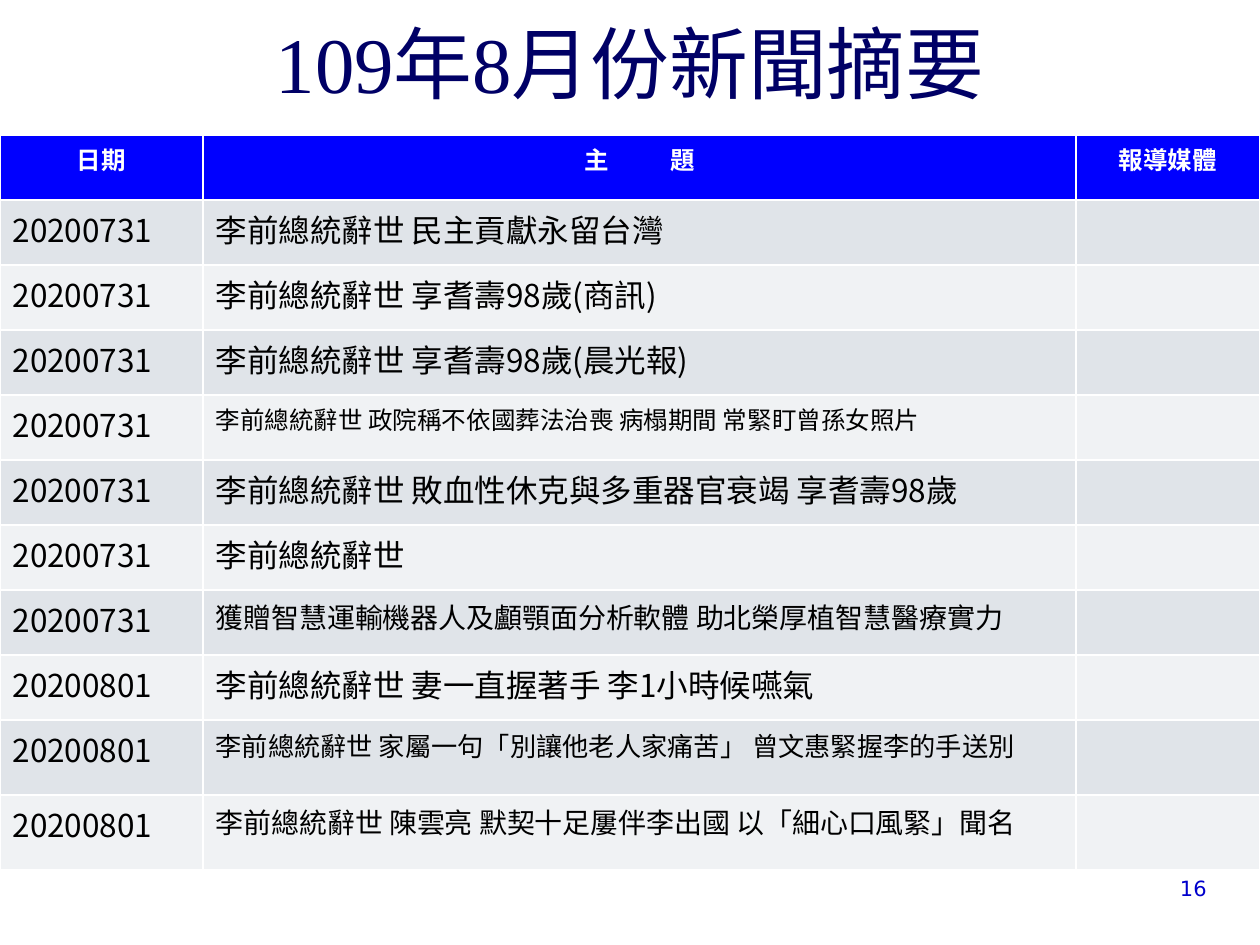
from pptx import Presentation
from pptx.dml.color import RGBColor
from pptx.enum.text import MSO_ANCHOR, PP_ALIGN
from pptx.oxml.ns import qn
from pptx.util import Emu, Pt
from lxml.etree import SubElement

CJK = "Noto Sans CJK SC"
COLUMNS = [203, 873, 184]
ROW_HEIGHTS = [65] * 9 + [75] * 2
HEADER_FILL = "0000FF"
BAND_FILLS = ["E0E4E9", "F0F2F4"]
# Date, subject, size of the subject
NEWS = [
    ("20200731", "李前總統辭世 民主貢獻永留台灣", 18),
    ("20200731", "李前總統辭世 享耆壽98歲(商訊)", 18),
    ("20200731", "李前總統辭世 享耆壽98歲(晨光報)", 18),
    ("20200731", "李前總統辭世 政院稱不依國葬法治喪 病榻期間 常緊盯曾孫女照片", 14),
    ("20200731", "李前總統辭世 敗血性休克與多重器官衰竭 享耆壽98歲", 18),
    ("20200731", "李前總統辭世", 18),
    ("20200731", "獲贈智慧運輸機器人及顱顎面分析軟體 助北榮厚植智慧醫療實力", 16),
    ("20200801", "李前總統辭世 妻一直握著手 李1小時候嚥氣", 18),
    ("20200801", "李前總統辭世 家屬一句「別讓他老人家痛苦」 曾文惠緊握李的手送別", 15),
    ("20200801", "李前總統辭世 陳雲亮 默契十足屢伴李出國 以「細心口風緊」聞名", 16),
]


def px(n):
    return Emu(round(n * 914400 / 126))


def color(value):
    return RGBColor.from_string(value)


def place(shape, left, top, width, height):
    box = dict(left=left, top=top, width=width, height=height)
    for name, value in box.items():
        setattr(shape, name, px(value))


def add_run(p, text, size, hex_color, font=CJK, bold=False):
    r = p.add_run()
    r.text = text
    for name, value in dict(size=Pt(size), name=font, bold=bold).items():
        setattr(r.font, name, value)
    r.font.color.rgb = color(hex_color)
    if font == CJK:
        SubElement(r.font._element, qn("a:ea"), typeface=CJK)
    return r


def add_title(s, text):
    title = s.shapes.title
    place(title, 79, 43, 1102, 73)
    tf = title.text_frame
    tf.vertical_anchor = MSO_ANCHOR.BOTTOM
    p = tf.paragraphs[0]
    p.alignment = PP_ALIGN.CENTER
    add_run(p, text, 45, "000066", "Times New Roman")


def fill_header(cells):
    for cell, parts in zip(cells, [["日期"], ["主 ", "題"], ["報導媒體"]]):
        p = cell.text_frame.paragraphs[0]
        p.alignment = PP_ALIGN.CENTER
        runs = [add_run(p, part, 14, "FFFFFF", bold=True) for part in parts]
        for r in runs[:-1]:
            r.font._element.set("spc", "1600")  # wide gap between the two characters


def add_news_table(s):
    table = s.shapes.add_table(len(ROW_HEIGHTS), len(COLUMNS), px(0), px(135),
                               px(sum(COLUMNS)), px(sum(ROW_HEIGHTS))).table
    for column, width in zip(table.columns, COLUMNS):
        column.width = px(width)
    for i, (row, height) in enumerate(zip(table.rows, ROW_HEIGHTS)):
        row.height = px(height)
        for cell in row.cells:
            cell.fill.solid()
            cell.fill.fore_color.rgb = color(BAND_FILLS[(i - 1) % 2] if i else HEADER_FILL)
    fill_header(table.rows[0].cells)
    for i, (date, subject, size) in enumerate(NEWS, 1):
        add_run(table.cell(i, 0).text_frame.paragraphs[0], date, 18, "000000")
        add_run(table.cell(i, 1).text_frame.paragraphs[0], subject, size, "000000")


def add_page_number(s, number):
    tf = s.shapes.add_textbox(px(1126), px(869), px(93), px(38)).text_frame
    tf.word_wrap = True
    p = tf.paragraphs[0]
    p.alignment = PP_ALIGN.RIGHT
    add_run(p, number, 12, "0000CC", "DejaVu Sans")


def main():
    prs = Presentation()
    prs.slide_width, prs.slide_height = px(1260), px(945)
    s = prs.slides.add_slide(prs.slide_layouts[5])
    add_title(s, "109年8月份新聞摘要")
    add_news_table(s)
    add_page_number(s, "16")
    prs.save("out.pptx")


if __name__ == "__main__":
    main()
